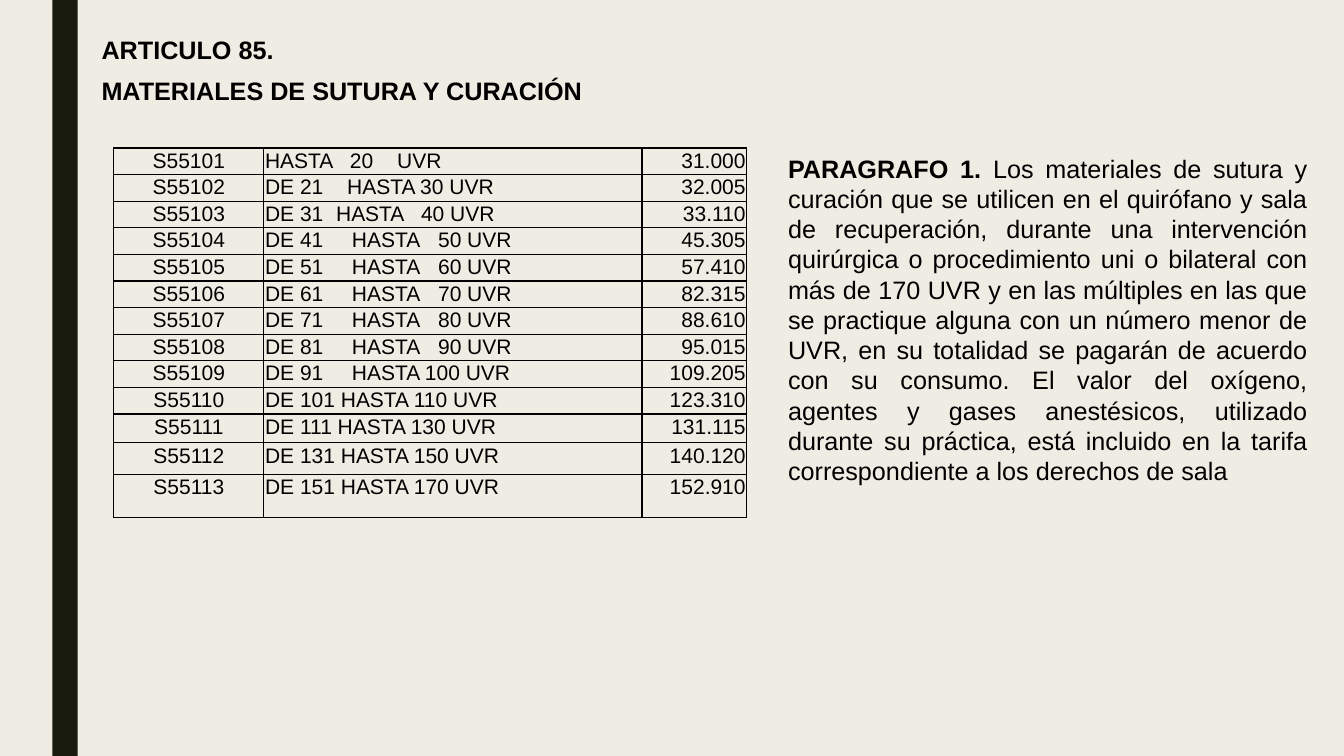
from dataclasses import dataclass

from lxml.etree import SubElement
from pptx import Presentation
from pptx.dml.color import RGBColor
from pptx.enum.shapes import MSO_SHAPE as Shape
from pptx.enum.text import MSO_AUTO_SIZE as AutoSize, PP_ALIGN as Align
from pptx.oxml import parse_xml
from pptx.oxml.ns import nsdecls, qn
from pptx.slide import Slide
from pptx.table import _Cell as Cell
from pptx.text.text import _Paragraph as Paragraph
from pptx.util import Cm, Pt


@dataclass(frozen=True)
class Theme:
    font: str = "Arial"
    paper: RGBColor = RGBColor(0xEF, 0xED, 0xE3)
    band: RGBColor = RGBColor(0x19, 0x1B, 0x0E)
    ink: RGBColor = RGBColor(0, 0, 0)
    body: int = 18
    table: int = 15
    rule: int = 1


@dataclass(frozen=True)
class Phrase:
    text: str
    bold: bool = False


@dataclass(frozen=True)
class TextBlock:
    left: float
    top: float
    width: float
    height: float
    phrases: tuple[Phrase, ...]
    align: Align = Align.LEFT
    wrap: bool = False


@dataclass(frozen=True)
class Tariff:
    uvr_range: str
    value: str
    stops: tuple[float, ...] = ()  # tab stops in cm
    height: float = 0.67


THEME = Theme()
WIDE_STOPS = (2.19, 4.36)
COLUMN_WIDTHS = (3.78, 9.53, 2.64)
COLUMN_ALIGNS = (Align.CENTER, Align.LEFT, Align.RIGHT)

TARIFFS = (
    Tariff("HASTA\t20\tUVR", "31.000", (2.14, 3.33)),
    Tariff("DE 21\tHASTA 30 UVR", "32.005", (2.07,)),
    Tariff("DE 31\tHASTA\t40 UVR", "33.110", (1.79, 3.93)),
    Tariff("DE 41\tHASTA\t50 UVR", "45.305", WIDE_STOPS),
    Tariff("DE 51\tHASTA\t60 UVR", "57.410", WIDE_STOPS),
    Tariff("DE 61\tHASTA\t70 UVR", "82.315", WIDE_STOPS),
    Tariff("DE 71\tHASTA\t80 UVR", "88.610", WIDE_STOPS),
    Tariff("DE 81\tHASTA\t90 UVR", "95.015", WIDE_STOPS),
    Tariff("DE 91\tHASTA 100 UVR", "109.205", WIDE_STOPS),
    Tariff("DE 101 HASTA 110 UVR", "123.310"),
    Tariff("DE 111 HASTA 130 UVR", "131.115", height=0.73),
    Tariff("DE 131 HASTA 150 UVR", "140.120", height=0.79),
    Tariff("DE 151 HASTA 170 UVR", "152.910", height=1.09),
)

TEXT_BLOCKS = (
    TextBlock(2.31, 0.74, 5.08, 1.02, (Phrase("ARTICULO 85.", True),)),
    TextBlock(2.31, 1.78, 12.75, 1.02,
              (Phrase("MATERIALES DE SUTURA Y CURACIÓN", True),)),
    TextBlock(19.61, 3.73, 13.59, 8.71, (
        Phrase("PARAGRAFO 1. ", True),
        Phrase("Los materiales de sutura y curación que se utilicen en el "
               "quirófano y sala de recuperación, durante una intervención "
               "quirúrgica o procedimiento uni o bilateral con más de 170 UVR "
               "y en las múltiples en las que se practique alguna con un "
               "número menor de UVR, en su totalidad se pagarán de acuerdo "
               "con su consumo. El valor del oxígeno, agentes y gases "
               "anestésicos, utilizado durante su práctica, está incluido en "
               "la tarifa correspondiente a los derechos de sala"),
    ), Align.JUSTIFY, True),
)


def add_phrase(paragraph: Paragraph, phrase: Phrase, size: int) -> None:
    run = paragraph.add_run()
    run.text = phrase.text
    run.font.name = THEME.font
    run.font.size = Pt(size)
    run.font.bold = phrase.bold
    run.font.color.rgb = THEME.ink


def add_text_block(slide: Slide, block: TextBlock) -> None:
    frame = slide.shapes.add_textbox(Cm(block.left), Cm(block.top),
                                     Cm(block.width), Cm(block.height)).text_frame
    frame.word_wrap = block.wrap
    frame.auto_size = AutoSize.SHAPE_TO_FIT_TEXT
    paragraph = frame.paragraphs[0]
    paragraph.alignment = block.align
    for phrase in block.phrases:
        add_phrase(paragraph, phrase, THEME.body)


def set_tab_stops(paragraph: Paragraph, stops: tuple[float, ...]) -> None:
    tab_list = SubElement(paragraph._p.get_or_add_pPr(), qn("a:tabLst"))
    for stop in stops:
        SubElement(tab_list, qn("a:tab"), pos=str(Cm(stop)), algn="l")


def style_cell(cell: Cell) -> None:
    cell.margin_left = cell.margin_right = cell.margin_top = Cm(0.03)
    cell.margin_bottom = 0
    cell.fill.background()
    properties = cell._tc.get_or_add_tcPr()
    for place, side in enumerate(("lnL", "lnR", "lnT", "lnB")):
        properties.insert(place, parse_xml(
            f'<a:{side} {nsdecls("a")} w="{Pt(THEME.rule)}"><a:solidFill>'
            f'<a:srgbClr val="{THEME.ink}"/></a:solidFill></a:{side}>'))


def add_tariff_table(slide: Slide) -> None:
    table = slide.shapes.add_table(
        len(TARIFFS), len(COLUMN_WIDTHS), Cm(2.87), Cm(3.73),
        Cm(sum(COLUMN_WIDTHS)), Cm(sum(t.height for t in TARIFFS))).table
    table.first_row = table.horz_banding = False
    for column, width in zip(table.columns, COLUMN_WIDTHS):
        column.width = Cm(width)
    for index, tariff in enumerate(TARIFFS):
        row = table.rows[index]
        row.height = Cm(tariff.height)
        texts = (f"S551{index + 1:02}", tariff.uvr_range, tariff.value)
        for cell, text, align in zip(row.cells, texts, COLUMN_ALIGNS):
            style_cell(cell)
            paragraph = cell.text_frame.paragraphs[0]
            paragraph.alignment = align
            if "\t" in text:
                set_tab_stops(paragraph, tariff.stops)
            add_phrase(paragraph, Phrase(text), THEME.table)


def main() -> None:
    deck = Presentation()
    deck.slide_width, deck.slide_height = Cm(33.87), Cm(19.05)
    slide = deck.slides.add_slide(deck.slide_layouts[6])

    # Background and side band
    slide.background.fill.solid()
    slide.background.fill.fore_color.rgb = THEME.paper
    band = slide.shapes.add_shape(Shape.RECTANGLE, Cm(1.32), 0,
                                  Cm(0.64), deck.slide_height)
    band.shadow.inherit = False
    band.fill.solid()
    band.fill.fore_color.rgb = THEME.band
    band.line.fill.background()

    # Tariffs by UVR range
    add_tariff_table(slide)

    # Headings and explanatory paragraph
    for block in TEXT_BLOCKS:
        add_text_block(slide, block)

    deck.save("out.pptx")


if __name__ == "__main__":
    main()
